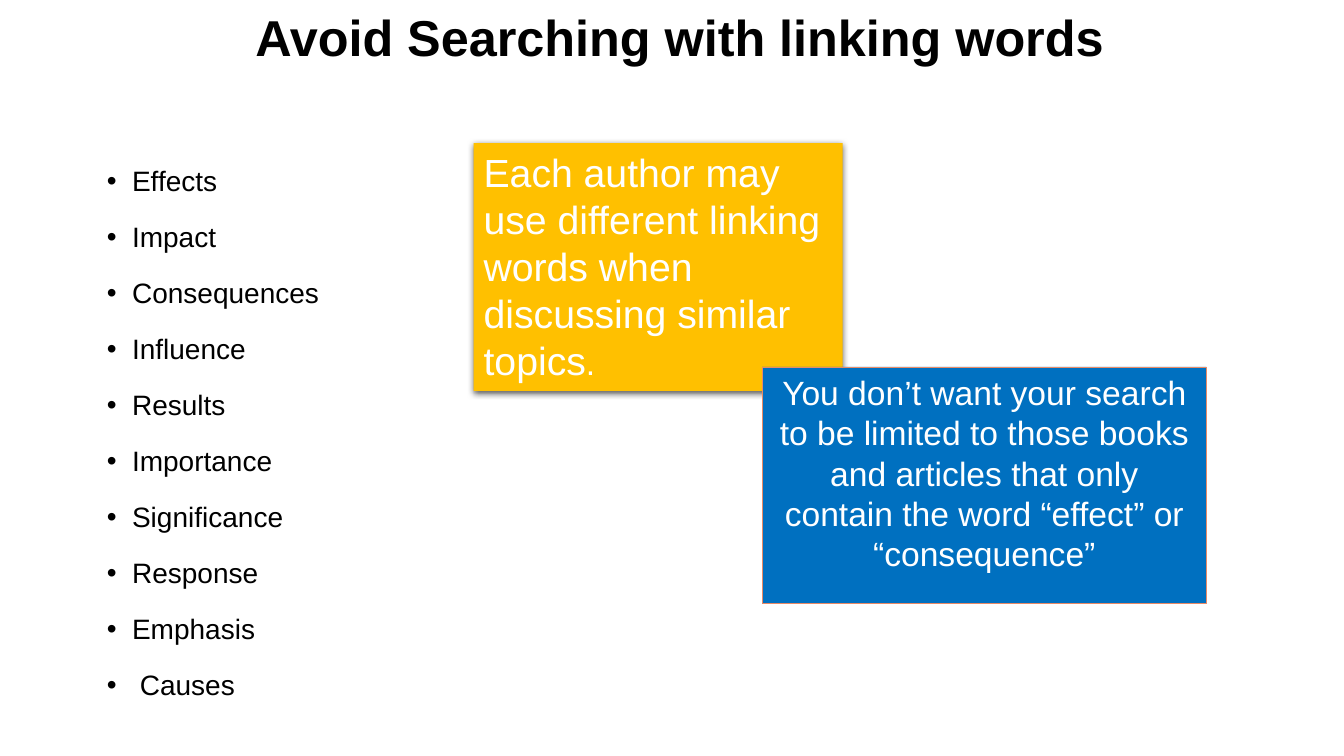
from lxml.etree import SubElement
from pptx import Presentation
from pptx.dml.color import RGBColor
from pptx.enum.shapes import MSO_SHAPE as Shape
from pptx.enum.text import MSO_ANCHOR as Anchor, MSO_AUTO_SIZE as Fit, PP_ALIGN as Align
from pptx.oxml.ns import qn
from pptx.util import Pt

BLACK = RGBColor(0, 0, 0)
WHITE = RGBColor(255, 255, 255)
GOLD = RGBColor(255, 192, 0)
BLUE = RGBColor(0, 112, 192)
CORAL = RGBColor(231, 138, 103)
FONT = "Arial"

TITLE = "Avoid Searching with linking words"
WORDS = ["Effects", "Impact", "Consequences", "Influence", "Results",
         "Importance", "Significance", "Response", "Emphasis", " Causes"]
REASON = [("Each author may use different linking words when discussing similar topics", 28),
          (".", 24)]
ADVICE = [("You don’t want your search to be limited to those books and articles "
           "that only contain the word “effect” or “consequence”", 24)]

TITLE_BOX = (85, 5.8, 801.4, 77.8)
LIST_BOX = (69.1, 108.7, 511.2, 386.6)
GOLD_BOX = (338.4, 102.2, 263.5, 177.1)
BLUE_BOX = (544.3, 262.1, 317.5, 169.2)


def place(item, box):
    item.left, item.top, item.width, item.height = map(Pt, box)
    frame = item.text_frame
    frame.word_wrap = True
    frame.auto_size = Fit.NONE
    frame.vertical_anchor = Anchor.TOP
    return frame


def write(para, runs, color, align, bold=False):
    para.alignment = align
    for text, size in runs:
        run = para.add_run()
        run.text = text
        font = run.font
        font.name, font.size, font.bold = FONT, Pt(size), bold
        font.color.rgb = color


def bullet(para):
    props = para._p.get_or_add_pPr()
    props.set("marL", str(Pt(18)))
    props.set("indent", str(-Pt(18)))
    SubElement(props, qn("a:buFont"), typeface=FONT)
    SubElement(props, qn("a:buChar"), char="•")


def card(slide, box, fill, runs, align):
    item = slide.shapes.add_shape(Shape.RECTANGLE, *map(Pt, box))
    item.shadow.inherit = False
    item.fill.solid()
    item.fill.fore_color.rgb = fill
    item.line.fill.background()
    write(place(item, box).paragraphs[0], runs, WHITE, align)
    return item


def shade(item):
    effects = item._element.spPr.find(qn("a:effectLst"))
    outer = SubElement(effects, qn("a:outerShdw"), blurRad=str(Pt(4.5)),
                       dist=str(Pt(1.5)), dir="5400000", algn="ctr", rotWithShape="0")
    color = SubElement(outer, qn("a:srgbClr"), val=str(BLACK))
    SubElement(color, qn("a:alpha"), val="63000")


def main():
    deck = Presentation()
    deck.slide_width, deck.slide_height = Pt(960), Pt(540)
    slide = deck.slides.add_slide(deck.slide_layouts[1])

    head = place(slide.shapes.title, TITLE_BOX).paragraphs[0]
    head.line_spacing = 0.9
    write(head, [(TITLE, 36)], BLACK, Align.CENTER, True)

    body = place(slide.placeholders[1], LIST_BOX)
    for i, word in enumerate(WORDS):
        para = body.add_paragraph() if i else body.paragraphs[0]
        para.line_spacing = 1.2
        para.space_before = Pt(11.2)
        write(para, [(word, 20)], BLACK, Align.LEFT)
        bullet(para)

    shade(card(slide, GOLD_BOX, GOLD, REASON, Align.LEFT))
    note = card(slide, BLUE_BOX, BLUE, ADVICE, Align.CENTER)
    note.line.color.rgb = CORAL
    note.line.width = Pt(0.5)

    deck.save("out.pptx")


if __name__ == "__main__":
    main()
